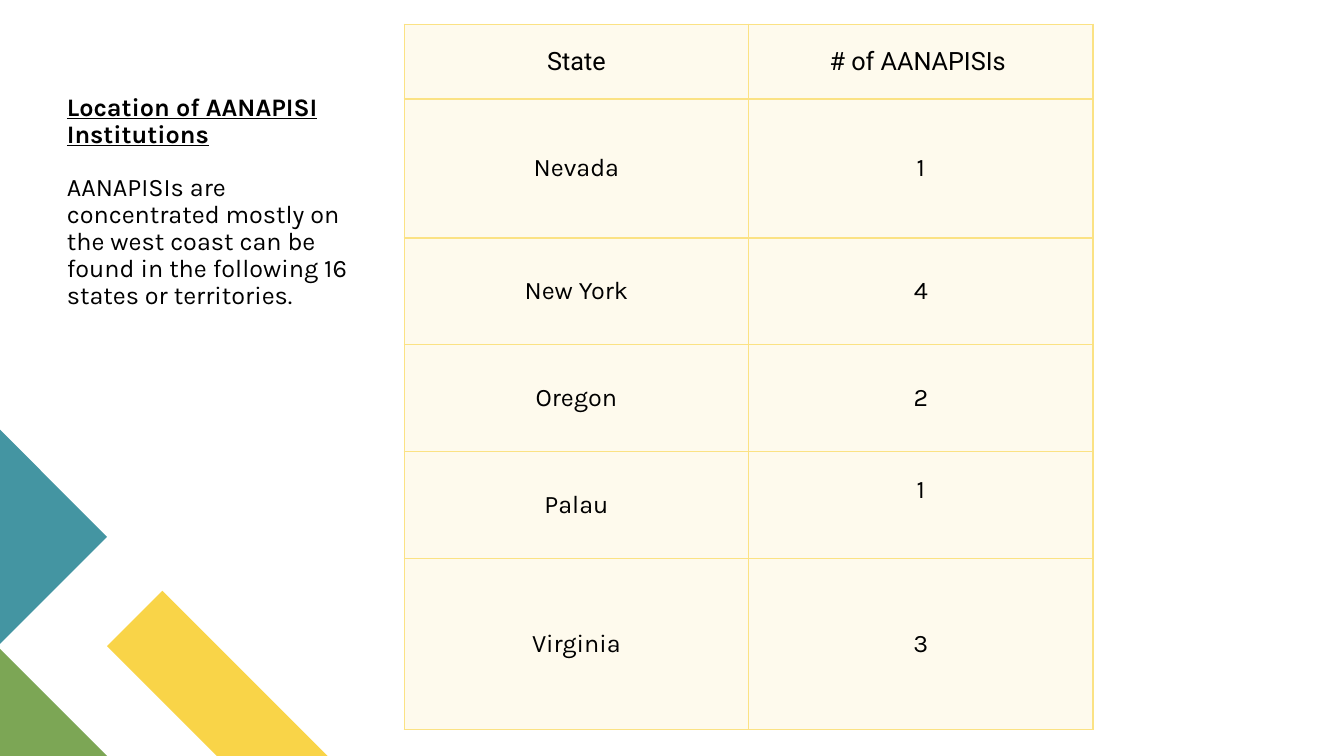
from dataclasses import dataclass

from lxml.etree import SubElement
from pptx import Presentation
from pptx.dml.color import RGBColor
from pptx.enum.text import MSO_ANCHOR, MSO_AUTO_SIZE, PP_ALIGN
from pptx.oxml.ns import qn
from pptx.util import Pt


@dataclass(frozen=True)
class Theme:
    text: str = "000000"
    teal: str = "4495A2"
    green: str = "7CA655"
    yellow: str = "F9D448"
    cell: str = "FEFAED"
    border: str = "FBE284"
    border_width: float = 1
    size: float = 18
    body_font: str = "Karla"
    header_font: str = "Roboto"


THEME = Theme()

HEADING = "Location of AANAPISI Institutions"
SUMMARY = ("AANAPISIs are concentrated mostly on the west coast can be "
           "found in the following 16 states or territories.")
STATE_ROWS = [
    ("State", "# of AANAPISIs "),
    ("Nevada", "1"),
    ("New York", "4"),
    ("Oregon", "2"),
    ("Palau", "1"),
    ("Virginia", "3"),
]
ROW_HEIGHTS = [53.5, 99.25, 76.25, 76.25, 76.25, 122.25]


def set_font(p, name):
    p.font.name = name
    p.font.size = Pt(THEME.size)
    p.font.color.rgb = RGBColor.from_string(THEME.text)


def add_polygon(s, points, color):
    (x, y), *rest = [(Pt(px), Pt(py)) for px, py in points]
    builder = s.shapes.build_freeform(x, y, scale=1)
    builder.add_line_segments(rest, close=True)
    sp = builder.convert_to_shape()
    sp.shadow.inherit = False
    sp.fill.solid()
    sp.fill.fore_color.rgb = RGBColor.from_string(color)
    sp.line.fill.background()


def add_corner_art(s, left, bottom, half):
    """Place the diagonal shapes in the lower left corner; half is half the teal diamond."""
    right = left + half
    green_top = bottom - half
    teal_bottom = green_top - 3.5
    band_drop, band_rise = 78.5, 39.5
    band_y = bottom - band_drop
    add_polygon(s, [(right, band_y),
                    (right + band_rise, band_y - band_rise),
                    (right + band_drop + 2 * band_rise, bottom),
                    (right + band_drop, bottom)], THEME.yellow)
    add_polygon(s, [(left, green_top), (right, bottom), (left, bottom)], THEME.green)
    add_polygon(s, [(left, teal_bottom - 2 * half), (right, teal_bottom - half),
                    (left, teal_bottom)], THEME.teal)


def fill_title(s, left, top, width, height):
    sp = s.shapes.title
    sp.left, sp.top, sp.width, sp.height = Pt(left), Pt(top), Pt(width), Pt(height)
    tf = sp.text_frame
    tf.word_wrap = True
    tf.auto_size = MSO_AUTO_SIZE.NONE
    tf.vertical_anchor = MSO_ANCHOR.TOP
    tf.margin_left, tf.margin_top = Pt(0), Pt(21.6)
    tf.margin_right, tf.margin_bottom = Pt(7.2), Pt(3.6)
    tf.text = f"{HEADING}\n{SUMMARY}"
    for p, is_heading in zip(tf.paragraphs, (True, False)):
        set_font(p, THEME.body_font)
        p.font.bold = p.font.underline = is_heading
        p.alignment = PP_ALIGN.LEFT
        p.line_spacing = 0.9
        p.space_before = Pt(18)


def set_borders(cell):
    tc_pr = cell._tc.get_or_add_tcPr()
    for index, side in enumerate(("a:lnL", "a:lnR", "a:lnT", "a:lnB")):
        ln = SubElement(tc_pr, qn(side), w=str(Pt(THEME.border_width)))
        tc_pr.insert(index, ln)
        fill = SubElement(ln, qn("a:solidFill"))
        SubElement(fill, qn("a:srgbClr"), val=THEME.border)


def add_state_table(s, left, top, width):
    columns = len(STATE_ROWS[0])
    frame = s.shapes.add_table(len(STATE_ROWS), columns, Pt(left), Pt(top),
                               Pt(width), Pt(sum(ROW_HEIGHTS)))
    table = frame.table
    table.first_row = table.horz_banding = False
    for column in table.columns:
        column.width = Pt(width / columns)
    for i, (values, height) in enumerate(zip(STATE_ROWS, ROW_HEIGHTS)):
        table.rows[i].height = Pt(height)
        for j, value in enumerate(values):
            cell = table.cell(i, j)
            cell.text = value
            cell.vertical_anchor = MSO_ANCHOR.MIDDLE
            cell.fill.solid()
            cell.fill.fore_color.rgb = RGBColor.from_string(THEME.cell)
            set_borders(cell)
            p = cell.text_frame.paragraphs[0]
            p.alignment = PP_ALIGN.CENTER
            set_font(p, THEME.body_font if i else THEME.header_font)
    # The count for Palau sits above the middle of its row.
    table.cell(4, 1).margin_bottom = Pt(25)


def add_location_slide(prs):
    s = prs.slides.add_slide(prs.slide_layouts[5])
    add_corner_art(s, left=0, bottom=540, half=76.5)
    fill_title(s, left=47.75, top=46, width=222.5, height=314.5)
    add_state_table(s, left=288.75, top=17.25, width=492)


def main():
    prs = Presentation()
    prs.slide_width, prs.slide_height = Pt(960), Pt(540)
    add_location_slide(prs)
    prs.save("out.pptx")


if __name__ == "__main__":
    main()
